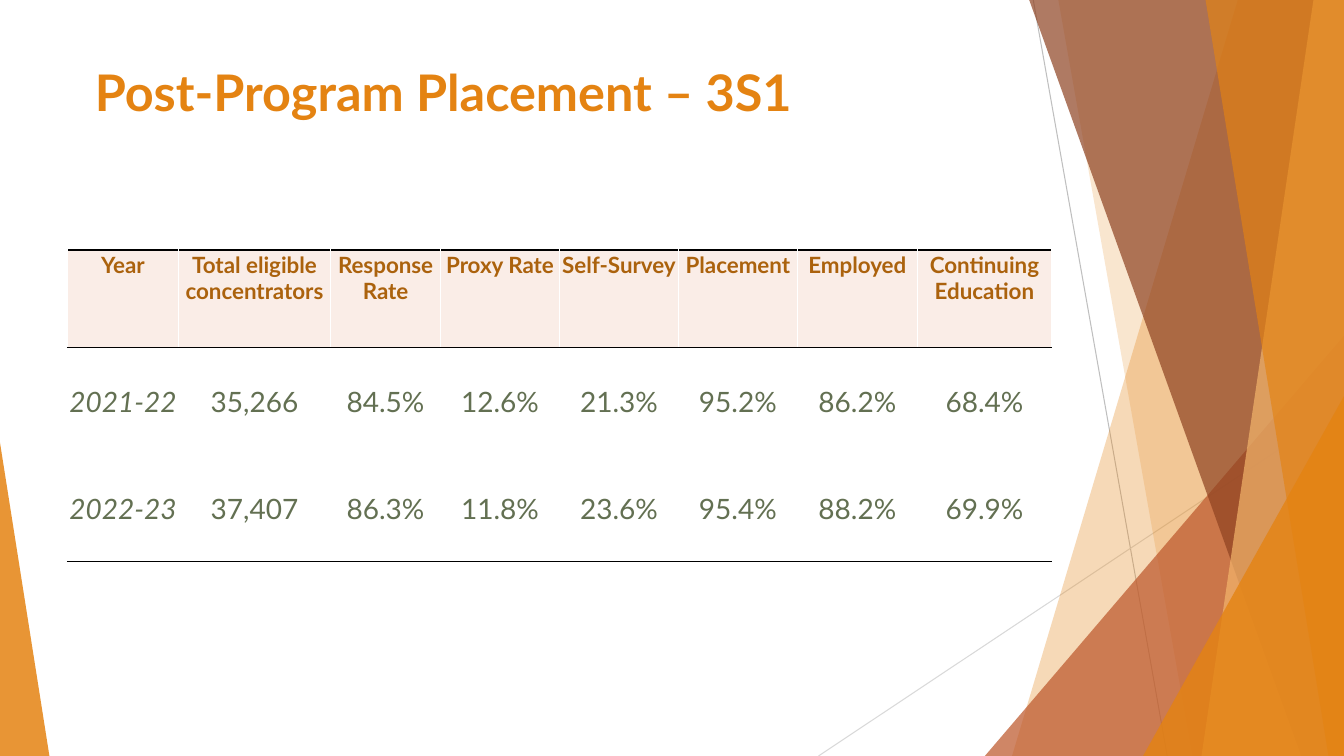
import dataclasses

import pptx
import pptx.dml.color
import pptx.enum.shapes
import pptx.enum.text
import pptx.oxml
import pptx.oxml.ns
import pptx.util


@dataclasses.dataclass(frozen=True)
class Theme:
    font: str = "Lato"
    orange: str = "E48312"
    light_orange: str = "F3B56C"
    rust: str = "BD582C"
    brown: str = "8E4221"
    header_text: str = "AB620D"
    header_fill: str = "FAEDE7"
    body_text: str = "637052"
    rule: str = "000000"
    white: str = "FFFFFF"
    title_size: int = 36
    header_size: int = 16
    body_size: int = 20


theme = Theme()
rgb = pptx.dml.color.RGBColor.from_string

presentation = pptx.Presentation()
presentation.slide_width = pptx.util.Inches(13.333)
presentation.slide_height = pptx.util.Inches(7.5)
slide = presentation.slides.add_slide(presentation.slide_layouts[5])
shapes = slide.shapes

# All places are percentages of the slide's width and height.
column = presentation.slide_width / 100
row = presentation.slide_height / 100


def place(x, y):
    """Turn percentages of the slide into lengths."""
    return pptx.util.Emu(round(x * column)), pptx.util.Emu(round(y * row))


def add_text(paragraph, text, size, color, bold=False, italic=False):
    run = paragraph.add_run()
    run.text = text
    run.font.name = theme.font
    run.font.size = pptx.util.Pt(size)
    run.font.color.rgb = rgb(color)
    run.font.bold = bold
    run.font.italic = italic


# Thin crossing lines
for start, end, color in [
    ((76.88, 0), (86.85, 100), "BFBFBF"),
    ((100, 53.73), (60.9, 100), "D9D9D9"),
]:
    connector = shapes.add_connector(
        pptx.enum.shapes.MSO_CONNECTOR.STRAIGHT, *place(*start), *place(*end))
    connector.line.color.rgb = rgb(color)
    connector.line.width = pptx.util.Pt(0.75)
    properties = connector.element.find(pptx.oxml.ns.qn("p:spPr"))
    properties.append(pptx.oxml.parse_xml(
        f"<a:effectLst {pptx.oxml.ns.nsdecls('a')}/>"))

# Bands run from (top left, bottom left) to the right edge;
# triangles are given as (left, top, width, apex) and stand on the bottom edge.
facets = [
    ("band", (92.1, 75.3), theme.orange, 30),
    ("band", (78.75, 88.73), theme.orange, 20),
    ("triangle", (73.28, 44.4, 26.72, 1), theme.rust, 72),
    ("band", (76.58, 96.83), theme.brown, 70),
    ("band", (97.73, 89.4), theme.light_orange, 70),
    ("band", (89.7, 98.85), theme.orange, 65),
    ("triangle", (85.05, 52.4, 14.95, 1), theme.orange, 80),
    ("triangle", (0, 58.53, 3.68, 0), theme.orange, 85),
]
for kind, measures, color, opacity in facets:
    if kind == "band":
        top_left, bottom_left = measures
        builder = shapes.build_freeform(*place(top_left, 0))
        builder.add_line_segments(
            [place(100, 0), place(100, 100), place(bottom_left, 100)], close=True)
        facet = builder.convert_to_shape()
    else:
        left, top, width, apex = measures
        facet = shapes.add_shape(
            pptx.enum.shapes.MSO_SHAPE.ISOSCELES_TRIANGLE,
            *place(left, top), *place(width, 100 - top))
        facet.adjustments[0] = apex
    facet.shadow.inherit = False
    facet.line.fill.background()
    facet.fill.solid()
    facet.fill.fore_color.rgb = rgb(color)
    color_element = next(facet.element.iter(pptx.oxml.ns.qn("a:srgbClr")))
    color_element.append(pptx.oxml.parse_xml(
        f"<a:alpha {pptx.oxml.ns.nsdecls('a')} val='{opacity * 1000}'/>"))

# Title, in front of the facets
title = shapes.title
title.left, title.top = place(6.3, 7.47)
title.width, title.height = place(79.13, 18.4)
title.element.getparent().append(title.element)
title.text_frame.word_wrap = True
title.text_frame.auto_size = pptx.enum.text.MSO_AUTO_SIZE.NONE
title.text_frame.vertical_anchor = pptx.enum.text.MSO_ANCHOR.TOP
title_paragraph = title.text_frame.paragraphs[0]
title_paragraph.alignment = pptx.enum.text.PP_ALIGN.LEFT
add_text(title_paragraph, "Post-Program Placement – 3S1",
         theme.title_size, theme.orange, bold=True)

# Placement table
placement_rows = [
    ["Year", "Total eligible concentrators", "Response Rate", "Proxy Rate",
     "Self-Survey", "Placement", "Employed", "Continuing Education"],
    ["2021-22", "35,266", "84.5%", "12.6%", "21.3%", "95.2%", "86.2%", "68.4%"],
    ["2022-23", "37,407", "86.3%", "11.8%", "23.6%", "95.4%", "88.2%", "69.9%"],
]
column_widths = [8.25, 11.33, 8.18, 8.85, 8.85, 8.85, 8.93, 9.98]
row_heights = [12.93, 14.13, 14.13]
# Colours of the horizontal rules, from above the header to below the last row
rules = [theme.rule, theme.rule, theme.white, theme.rule]

table = shapes.add_table(
    len(row_heights), len(column_widths), *place(5.03, 33.07),
    *place(sum(column_widths), sum(row_heights))).table
table.first_row = False
table.horz_banding = False
for table_column, width in zip(table.columns, column_widths):
    table_column.width = place(width, 0)[0]
for table_row, height in zip(table.rows, row_heights):
    table_row.height = place(0, height)[1]

for row_index, texts in enumerate(placement_rows):
    is_header = row_index == 0
    for column_index, text in enumerate(texts):
        cell = table.cell(row_index, column_index)
        cell.margin_left = cell.margin_right = cell.margin_top = pptx.util.Inches(0.01)
        cell.margin_bottom = 0
        borders = {"lnL": theme.white, "lnR": theme.white,
                   "lnT": rules[row_index], "lnB": rules[row_index + 1]}
        cell_properties = cell.element.get_or_add_tcPr() if hasattr(
            cell, "element") else table.rows[row_index].cells[column_index]._tc.get_or_add_tcPr()
        for tag, color in borders.items():
            cell_properties.append(pptx.oxml.parse_xml(
                f"<a:{tag} {pptx.oxml.ns.nsdecls('a')} w='12700'><a:solidFill>"
                f"<a:srgbClr val='{color}'/></a:solidFill></a:{tag}>"))
        paragraph = cell.text_frame.paragraphs[0]
        paragraph.alignment = pptx.enum.text.PP_ALIGN.CENTER
        if is_header:
            cell.fill.solid()
            cell.fill.fore_color.rgb = rgb(theme.header_fill)
            cell.vertical_anchor = pptx.enum.text.MSO_ANCHOR.TOP
            add_text(paragraph, text, theme.header_size, theme.header_text, bold=True)
        else:
            cell.fill.background()
            cell.vertical_anchor = pptx.enum.text.MSO_ANCHOR.MIDDLE
            add_text(paragraph, text, theme.body_size, theme.body_text,
                     italic=column_index == 0)

presentation.save("out.pptx")
